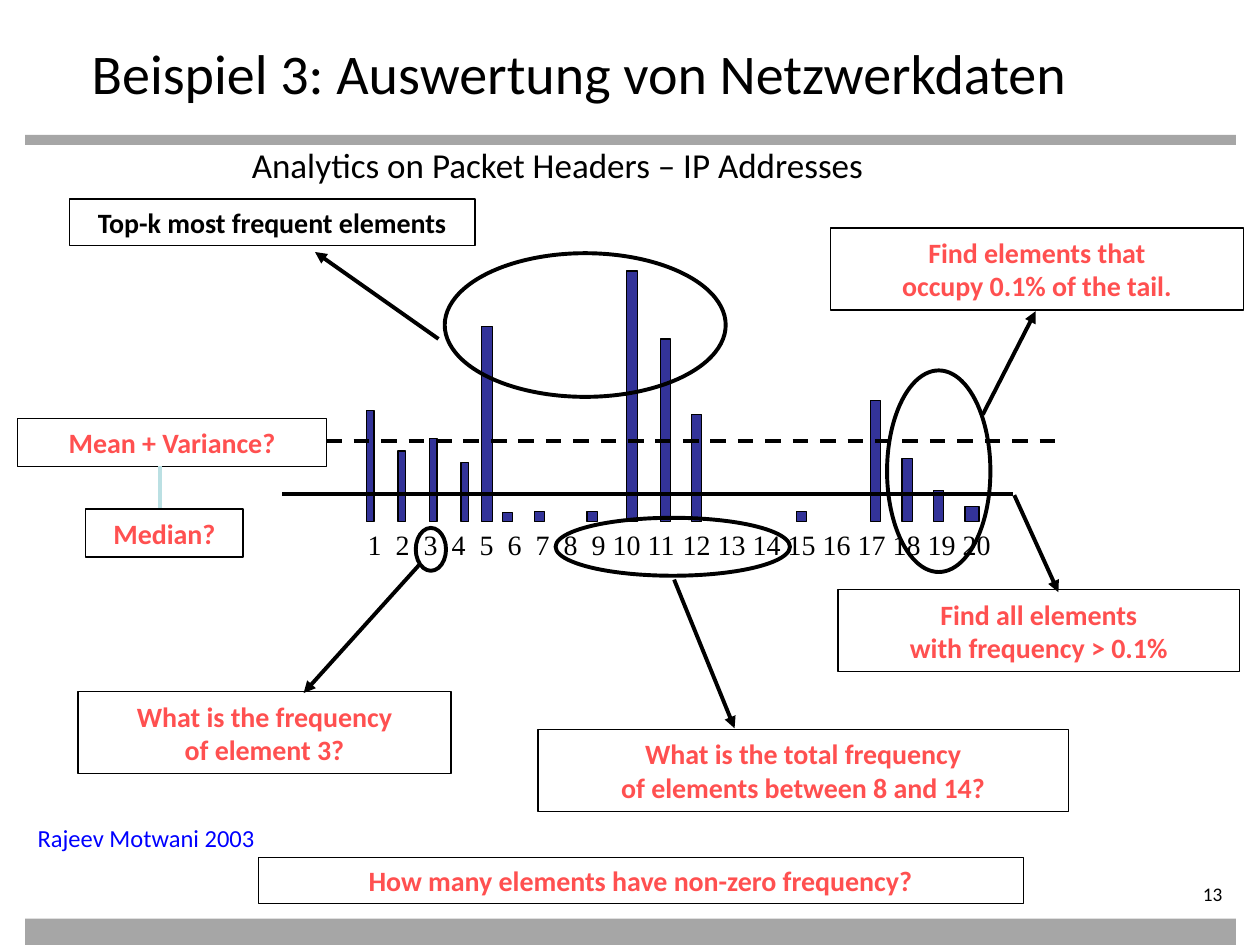
from lxml import etree
from pptx import Presentation
from pptx.dml.color import RGBColor
from pptx.enum.dml import MSO_LINE
from pptx.enum.shapes import MSO_CONNECTOR, MSO_SHAPE
from pptx.enum.text import MSO_ANCHOR, PP_ALIGN
from pptx.oxml.ns import qn
from pptx.util import Emu, Inches, Pt

RECT, OVAL = MSO_SHAPE.RECTANGLE, MSO_SHAPE.OVAL
STRAIGHT, DASH = MSO_CONNECTOR.STRAIGHT, MSO_LINE.DASH
LEFT, CENTER, RIGHT = PP_ALIGN.LEFT, PP_ALIGN.CENTER, PP_ALIGN.RIGHT
TOP, MIDDLE = MSO_ANCHOR.TOP, MSO_ANCHOR.MIDDLE

THEME = {
    "black": "000000", "band": "A6A6A6", "bar": "333399", "query": "FF5050",
    "source": "0000FF", "link": "BBE0E3",
    "sans": "Calibri", "serif": "Times New Roman",
    "title": 32, "subtitle": 20, "body": 16, "credit": 14, "number": 11,
    "thin": 0.75, "hair": 0.25, "thick": 2.25,
}

# The slide is a grid of 100 columns by 75 rows; all places are in cells.
WIDTH, HEIGHT = Inches(10), Inches(7.5)
CELL = WIDTH / 100

BANDS = [(2, 10.7, 96.1, 0.8), (2, 72.9, 96.1, 2.1)]

# text, place, size, colour, alignment
TEXTS = [
    ("Beispiel 3: Auswertung von Netzwerkdaten", (6.3, 2.6, 87, 5.5), "title", "black", LEFT),
    ("Analytics on Packet Headers – IP Addresses", (19, 10.9, 63.1, 4.3), "subtitle", "black", LEFT),
    ("Rajeev Motwani 2003", (2, 64.8, 35.4, 5), "credit", "source", LEFT),
    ("13", (87, 69.5, 11, 3.2), "number", "black", RIGHT),
]

# Frequency bars on a common base: left, width, height
BAR_BASE = 41.4
BARS = [
    (29.1, 0.6, 8.8), (31.6, 0.6, 5.6), (34.1, 0.6, 6.6), (36.6, 0.6, 4.7),
    (38.2, 0.9, 15.5), (39.9, 0.8, 0.7), (42.4, 0.8, 0.8), (46.6, 0.8, 0.8),
    (49.7, 0.9, 19.9), (52.4, 0.8, 14.5), (54.9, 0.8, 8.5), (63.2, 0.8, 0.8),
    (69.1, 0.8, 9.6), (71.6, 0.8, 5), (74.1, 0.8, 2.5), (76.6, 1.1, 1.2),
]

# Axis labels: pitch in points for one and two digit numbers
AXIS_AT = (28.2, 41.4, 53, 3.7)
AXIS_LAST, ONE_DIGIT, STEP_TO_TEN, TWO_DIGITS = 20, 16, 12, 20

# lines of text, place, colour, outline
QUERIES = [
    (["Top-k most frequent elements"], (5.5, 15.8, 32.2, 3.7), "black", "thin"),
    (["Find elements that", "occupy 0.1% of the tail."], (65.9, 18.1, 32.8, 6.5), "query", "thin"),
    (["Mean + Variance?"], (1.4, 33.2, 24.5, 3.8), "query", "thin"),
    (["Median?"], (6.8, 40.4, 12.5, 3.8), "query", "thin"),
    (["Find all elements", "with frequency > 0.1%"], (66.5, 46.8, 31.9, 6.5), "query", "thin"),
    (["What is the frequency", "of element 3?"], (6.2, 54.9, 29.6, 6.5), "query", "thin"),
    (["What is the total frequency", "of elements between 8 and 14?"],
     (42.7, 57.9, 42.1, 6.5), "query", "thin"),
    (["How many elements have non-zero frequency?"], (20.5, 68, 60.7, 3.7), "query", "hair"),
]

MARKS = [(35.3, 20.1, 22.3, 11.4), (33, 41.9, 2.4, 3.4),
         (44.1, 41.1, 18.6, 4.6), (70.4, 29.4, 8.2, 16)]

# start, end
ARROWS = [
    ((34.8, 26.9), (25, 20)), ((78, 32.9), (82.2, 24.7)),
    ((80.5, 39.3), (84, 47)), ((33.3, 44.8), (24.1, 55)),
    ((53.5, 46), (58.3, 57.8)),
]
# start, end, colour, dash
LINES = [
    ((22.4, 39.2), (80.4, 39.2), "black", None),
    ((25.9, 35), (84, 35), "black", DASH),
    ((12.7, 37), (12.7, 40.3), "link", None),
]


def cells(values):
    return [Emu(round(v * CELL)) for v in values]


def color(name):
    return RGBColor.from_string(THEME[name])


def add_box(s, kind, at, fill=None, line=None):
    sp = s.shapes.add_shape(kind, *cells(at))
    sp.shadow.inherit = False
    if fill:
        sp.fill.solid()
        sp.fill.fore_color.rgb = color(fill)
    else:
        sp.fill.background()
    if line:
        sp.line.color.rgb = color("black")
        sp.line.width = Pt(THEME[line])
    else:
        sp.line.fill.background()
    return sp


def write(sp, lines, size, ink, align, font="sans", bold=False, anchor=TOP, wrap=True):
    tf = sp.text_frame
    tf.word_wrap, tf.vertical_anchor = wrap, anchor
    style = {"name": THEME[font], "size": Pt(THEME[size]), "bold": bold}
    for i, text in enumerate(lines):
        p = tf.paragraphs[0] if i == 0 else tf.add_paragraph()
        p.alignment = align
        r = p.add_run()
        r.text = text
        for key, value in style.items():
            setattr(r.font, key, value)
        r.font.color.rgb = color(ink)
    return tf


def add_line(s, start, end, ink="black", dash=None, arrow=False):
    c = s.shapes.add_connector(STRAIGHT, *cells(start + end))
    c.line.color.rgb = color(ink)
    c.line.width = Pt(THEME["thick"])
    if dash:
        c.line.dash_style = dash
    if arrow:
        etree.SubElement(c.line._get_or_add_ln(), qn("a:tailEnd"), type="triangle")
    etree.SubElement(c._element.spPr, qn("a:effectLst"))


def add_axis(s):
    sp = s.shapes.add_textbox(*cells(AXIS_AT))
    labels = "\t".join(str(n) for n in range(1, AXIS_LAST + 1))
    tf = write(sp, [labels], "body", "black", LEFT, font="serif")
    tabs = etree.SubElement(tf.paragraphs[0]._p.get_or_add_pPr(), qn("a:tabLst"))
    pos = 0
    for n in range(2, AXIS_LAST + 1):
        pos += ONE_DIGIT if n < 10 else STEP_TO_TEN if n == 10 else TWO_DIGITS
        etree.SubElement(tabs, qn("a:tab"), pos=str(Pt(pos)), algn="l")


def main():
    prs = Presentation()
    prs.slide_width, prs.slide_height = WIDTH, HEIGHT
    s = prs.slides.add_slide(prs.slide_layouts[6])

    # Bands and plain text
    for at in BANDS:
        add_box(s, RECT, at, fill="band")
    for text, at, size, ink, align in TEXTS:
        write(s.shapes.add_textbox(*cells(at)), [text], size, ink, align)

    # Histogram
    add_axis(s)
    for left, width, height in BARS:
        add_box(s, RECT, (left, BAR_BASE - height, width, height), "bar", "thin")

    # Queries and the parts they point to
    for at in MARKS:
        add_box(s, OVAL, at, line="thick")
    for lines, at, ink, outline in QUERIES:
        sp = add_box(s, RECT, at, line=outline)
        write(sp, lines, "body", ink, CENTER, bold=True, anchor=MIDDLE, wrap=False)
    for start, end in ARROWS:
        add_line(s, start, end, arrow=True)
    for start, end, ink, dash in LINES:
        add_line(s, start, end, ink, dash)

    prs.save("out.pptx")


if __name__ == "__main__":
    main()
